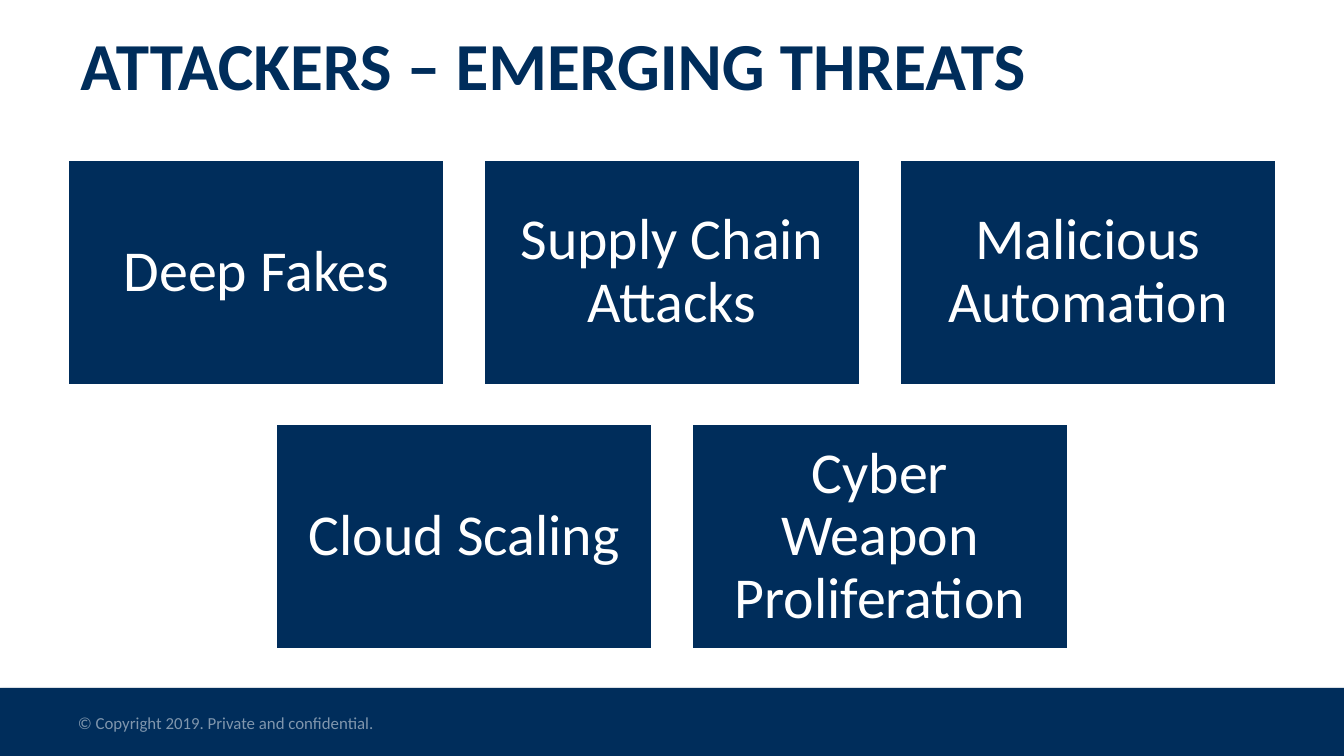
from lxml import etree
from pptx import Presentation
from pptx.dml.color import RGBColor
from pptx.enum import shapes, text
from pptx.oxml import ns
from pptx.util import Pt

TITLE = "ATTACKERS – EMERGING THREATS"
NOTICE = "© Copyright 2019. Private and confidential."
ROWS = [
    ["Deep Fakes", "Supply Chain Attacks", "Malicious Automation"],
    ["Cloud Scaling", "Cyber Weapon Proliferation"],
]
HUES = {"navy": "002D5B", "white": "FFFFFF", "mist": "8096AD", "black": "000000"}
FONT = "Calibri"
WIDE, HIGH = 720, 405
CARD_W, CARD_H, GAP, TOP = 202.5, 121.5, 20.25, 85.2


def hue(name):
    return RGBColor.from_string(HUES[name])


def write(shape, words, size, color, bold=False, lead=1.0, align=text.PP_ALIGN.LEFT):
    frame = shape.text_frame
    frame.word_wrap = True
    frame.vertical_anchor = text.MSO_ANCHOR.MIDDLE
    para = frame.paragraphs[0]
    para.alignment = align
    para.line_spacing = lead
    run = para.add_run()
    run.text = words
    run.font.name = FONT
    run.font.size = Pt(size)
    run.font.bold = bold
    run.font.color.rgb = hue(color)
    return frame


def box(slide, left, top, width, height):
    shape = slide.shapes.add_shape(
        shapes.MSO_SHAPE.RECTANGLE, Pt(left), Pt(top), Pt(width), Pt(height))
    shape.shadow.inherit = False
    shape.fill.solid()
    shape.fill.fore_color.rgb = hue("navy")
    return shape


def shade(shape):
    effects = shape.fill._xPr.find(ns.qn("a:effectLst"))
    outer = etree.SubElement(
        effects, ns.qn("a:outerShdw"), blurRad=str(Pt(3.1)), dist=str(Pt(1.8)),
        dir="5400000", rotWithShape="0")
    color = etree.SubElement(outer, ns.qn("a:srgbClr"), val=HUES["black"])
    etree.SubElement(color, ns.qn("a:alpha"), val="35000")


def card(slide, words, left, top):
    shape = box(slide, left, top, CARD_W, CARD_H)
    shape.line.color.rgb = hue("white")
    shape.line.width = Pt(2)
    frame = write(shape, words, 31, "white", lead=0.9, align=text.PP_ALIGN.CENTER)
    frame.margin_left = frame.margin_right = Pt(9.3)
    frame.margin_top = frame.margin_bottom = Pt(9.3)


def main():
    deck = Presentation()
    deck.slide_width, deck.slide_height = Pt(WIDE), Pt(HIGH)
    slide = deck.slides.add_slide(deck.slide_layouts[6])

    footer = box(slide, 0, 368.5, WIDE, 36.5)
    footer.line.fill.background()
    shade(footer)
    notice = slide.shapes.add_textbox(Pt(34.6), Pt(378), Pt(243.4), Pt(18))
    write(notice, NOTICE, 9, "mist")
    title = slide.shapes.add_textbox(Pt(36), Pt(10.8), Pt(648), Pt(54.7))
    write(title, TITLE, 36, "navy", bold=True, lead=0.8)

    for row, names in enumerate(ROWS):
        span = len(names) * (CARD_W + GAP) - GAP
        for col, name in enumerate(names):
            left = (WIDE - span) / 2 + col * (CARD_W + GAP)
            card(slide, name, left, TOP + row * (CARD_H + GAP))

    deck.save("out.pptx")


if __name__ == "__main__":
    main()
